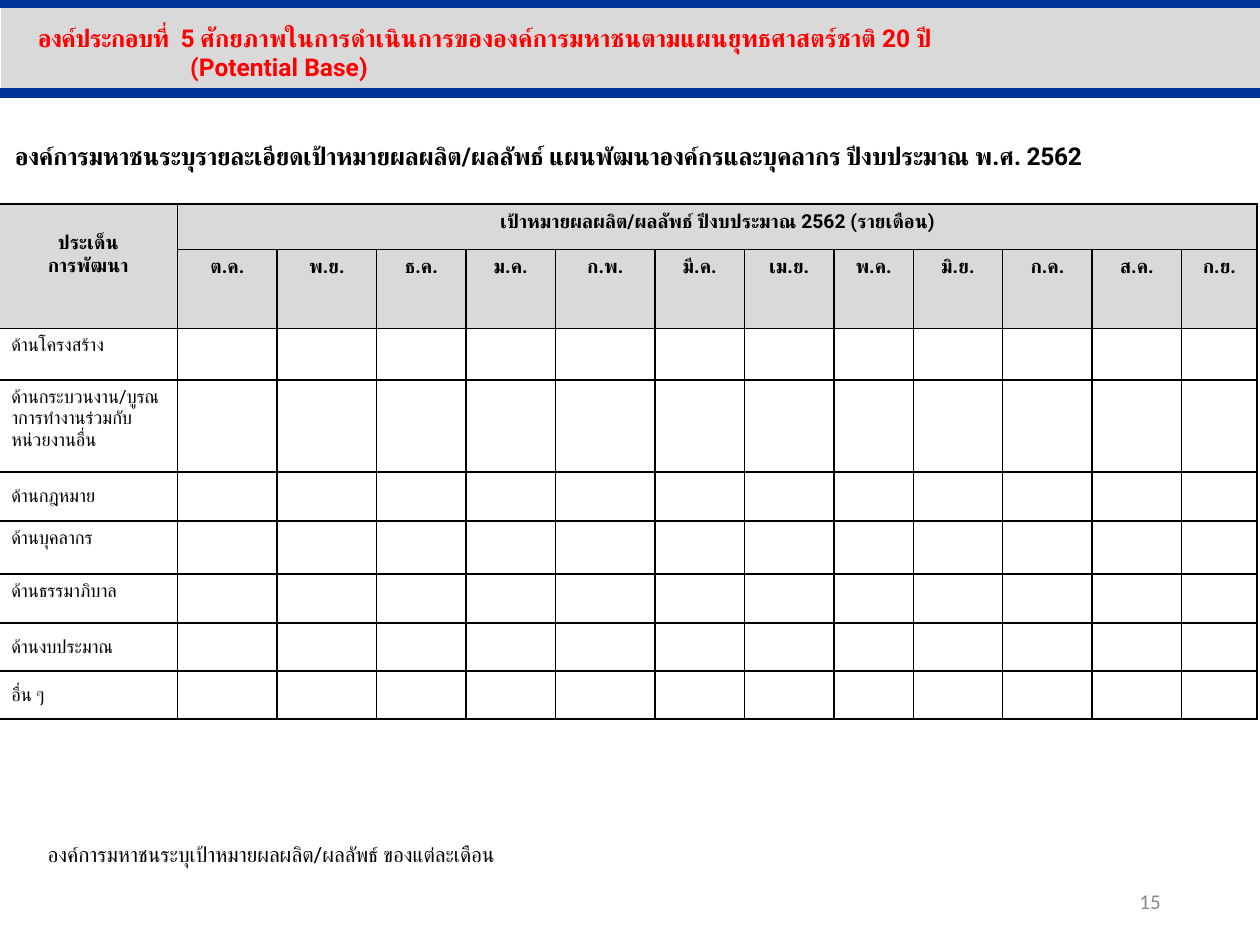
from dataclasses import dataclass

from lxml import etree
from pptx import Presentation
from pptx.dml.color import RGBColor
from pptx.enum.shapes import MSO_CONNECTOR, MSO_SHAPE
from pptx.enum.text import MSO_ANCHOR, MSO_AUTO_SIZE, PP_ALIGN
from pptx.oxml import parse_xml
from pptx.oxml.ns import nsdecls, qn
from pptx.util import Inches, Pt

LEFT, CENTER, RIGHT = PP_ALIGN.LEFT, PP_ALIGN.CENTER, PP_ALIGN.RIGHT
TOP, MIDDLE = MSO_ANCHOR.TOP, MSO_ANCHOR.MIDDLE
WIDTH, HEIGHT = 10, 7.5
TITLE_ONLY = 5


@dataclass(frozen=True)
class Style:
    size: float
    color: str = "000000"
    bold: bool = False
    font: str = "Roboto"
    spacing: int = 0


@dataclass(frozen=True)
class Theme:
    band: str = "D9D9D9"
    rule: str = "003399"
    border: str = "000000"
    title: Style = Style(14, "FF0000", True)
    subtitle: Style = Style(14, bold=True, spacing=-20)
    header: Style = Style(11, bold=True)
    body: Style = Style(10.5)
    note: Style = Style(12)
    number: Style = Style(12, "898989", font="Calibri")


@dataclass(frozen=True)
class Label:
    text: str
    left: float
    top: float
    width: float
    height: float
    style: Style
    align: PP_ALIGN = LEFT
    anchor: MSO_ANCHOR = TOP
    wrap: bool = True


@dataclass(frozen=True)
class Topic:
    text: str
    height: float
    anchor: MSO_ANCHOR = TOP


THEME = Theme()
MONTHS = ("ต.ค.", "พ.ย.", "ธ.ค.", "ม.ค.", "ก.พ.", "มี.ค.",
          "เม.ย.", "พ.ค.", "มิ.ย.", "ก.ค.", "ส.ค.", "ก.ย.")
TOPIC_WIDTH = 1.42
MONTH_WIDTHS = (0.79, 0.79, 0.71, 0.71, 0.79, 0.71, 0.71, 0.63, 0.71, 0.71, 0.71, 0.6)
HEADER_HEIGHTS = (0.36, 0.59)
TOPICS = (
    Topic("ด้านโครงสร้าง", 0.41),
    Topic("ด้านกระบวนงาน/บูรณาการทำงานร่วมกับหน่วยงานอื่น", 0.73),
    Topic("ด้านกฎหมาย", 0.39, MIDDLE),
    Topic("ด้านบุคลากร", 0.42),
    Topic("ด้านธรรมาภิบาล", 0.39),
    Topic("ด้านงบประมาณ", 0.38, MIDDLE),
    Topic("อื่น ๆ", 0.38, MIDDLE),
)
LABELS = (
    Label("องค์การมหาชนระบุรายละเอียดเป้าหมายผลผลิต/ผลลัพธ์ แผนพัฒนาองค์กรและบุคลากร "
          "ปีงบประมาณ พ.ศ. 2562", 0.02, 1.07, 9.98, 0.34, THEME.subtitle),
    Label("องค์การมหาชนระบุเป้าหมายผลผลิต/ผลลัพธ์ ของแต่ละเดือน",
          0.28, 6.63, 4.33, 0.3, THEME.note, wrap=False),
    Label("15", 7.06, 6.95, 2.25, 0.4, THEME.number, RIGHT, MIDDLE),
)


def format_paragraph(para, style: Style, align: PP_ALIGN = LEFT) -> None:
    para.alignment = align
    font = para.font
    font.size, font.bold, font.name = Pt(style.size), style.bold, style.font
    font.color.rgb = RGBColor.from_string(style.color)
    defaults = para._p.get_or_add_pPr().find(qn("a:defRPr"))
    etree.SubElement(defaults, qn("a:cs")).set("typeface", style.font)
    if style.spacing:
        defaults.set("spc", str(style.spacing))


def indent(para, margin: float, first: float) -> None:
    properties = para._p.get_or_add_pPr()
    properties.set("marL", str(Inches(margin)))
    properties.set("indent", str(Inches(first)))


def draw_band(page) -> None:
    band = page.shapes.add_shape(MSO_SHAPE.RECTANGLE, Inches(0.01), Inches(0.05),
                                 Inches(WIDTH - 0.01), Inches(0.68))
    band.shadow.inherit = False
    band.fill.solid()
    band.fill.fore_color.rgb = RGBColor.from_string(THEME.band)
    band.line.fill.background()
    for top in (0.74, 0.02):
        rule = page.shapes.add_connector(MSO_CONNECTOR.STRAIGHT, 0, Inches(top),
                                         Inches(WIDTH), Inches(top))
        rule.line.color.rgb = RGBColor.from_string(THEME.rule)
        rule.line.width = Pt(6)
        etree.SubElement(rule._element.spPr, qn("a:effectLst"))


def draw_title(page) -> None:
    title = page.shapes.title
    title.left, title.top = Inches(0.2), Inches(0.13)
    title.width, title.height = Inches(WIDTH - 0.2), Inches(0.57)
    frame = title.text_frame
    frame.auto_size, frame.vertical_anchor = MSO_AUTO_SIZE.NONE, TOP
    heading = frame.paragraphs[0]
    number = heading.add_run()
    number.text = "องค์ประกอบที่  5 "
    number.font._element.set("spc", "-30")
    heading.add_run().text = "ศักยภาพในการดำเนินการขององค์การมหาชนตามแผนยุทธศาสตร์ชาติ 20 ปี"
    base = frame.add_paragraph()
    base.text = "(Potential Base)"
    for para, margin, first in ((heading, 1.08, -1.08), (base, 1.21, 0)):
        format_paragraph(para, THEME.title)
        indent(para, margin, first)
    page.shapes._spTree.append(title._element)


def draw_label(page, label: Label) -> None:
    box = page.shapes.add_textbox(Inches(label.left), Inches(label.top),
                                  Inches(label.width), Inches(label.height))
    frame = box.text_frame
    frame.word_wrap, frame.vertical_anchor = label.wrap, label.anchor
    frame.text = label.text
    format_paragraph(frame.paragraphs[0], label.style, label.align)


def draw_borders(cell) -> None:
    properties = cell._tc.get_or_add_tcPr()
    for position, side in enumerate(("lnL", "lnR", "lnT", "lnB")):
        properties.insert(position, parse_xml(
            f'<a:{side} {nsdecls("a")} w="{Pt(1)}"><a:solidFill>'
            f'<a:srgbClr val="{THEME.border}"/></a:solidFill></a:{side}>'))


def write_cell(cell, text: str, style: Style, align: PP_ALIGN, anchor: MSO_ANCHOR = TOP) -> None:
    cell.text = text
    cell.vertical_anchor = anchor
    cell.margin_top = cell.margin_bottom = Inches(0.05 if text else 0)
    for para in cell.text_frame.paragraphs:
        format_paragraph(para, style, align)


def draw_table(page) -> None:
    widths = (TOPIC_WIDTH, *MONTH_WIDTHS)
    heights = (*HEADER_HEIGHTS, *(topic.height for topic in TOPICS))
    table = page.shapes.add_table(len(heights), len(widths), Inches(-0.01), Inches(1.62),
                                  Inches(sum(widths)), Inches(sum(heights))).table
    table.first_row = table.horz_banding = False
    for column, width in zip(table.columns, widths):
        column.width = Inches(width)
    for row, height in zip(table.rows, heights):
        row.height = Inches(height)

    headers = (("ประเด็น\vการพัฒนา", "เป้าหมายผลผลิต/ผลลัพธ์ ปีงบประมาณ 2562 (รายเดือน)",
                *[""] * (len(MONTHS) - 1)), ("", *MONTHS))
    for row, texts in enumerate(headers):
        for column, text in enumerate(texts):
            cell = table.cell(row, column)
            write_cell(cell, text, THEME.header, CENTER)
            cell.fill.solid()
            cell.fill.fore_color.rgb = RGBColor.from_string(THEME.band)
            draw_borders(cell)
    for row, topic in enumerate(TOPICS, len(headers)):
        for column in range(len(widths)):
            cell = table.cell(row, column)
            write_cell(cell, "" if column else topic.text, THEME.body, LEFT, topic.anchor)
            cell.fill.background()
            draw_borders(cell)
    table.cell(0, 0).merge(table.cell(1, 0))
    table.cell(0, 0).margin_top = Inches(0.22)
    table.cell(0, 1).merge(table.cell(0, len(MONTHS)))


def main() -> None:
    deck = Presentation()
    deck.slide_width, deck.slide_height = Inches(WIDTH), Inches(HEIGHT)
    page = deck.slides.add_slide(deck.slide_layouts[TITLE_ONLY])
    draw_band(page)
    draw_table(page)
    draw_title(page)
    for label in LABELS:
        draw_label(page, label)
    deck.save("out.pptx")


if __name__ == "__main__":
    main()
